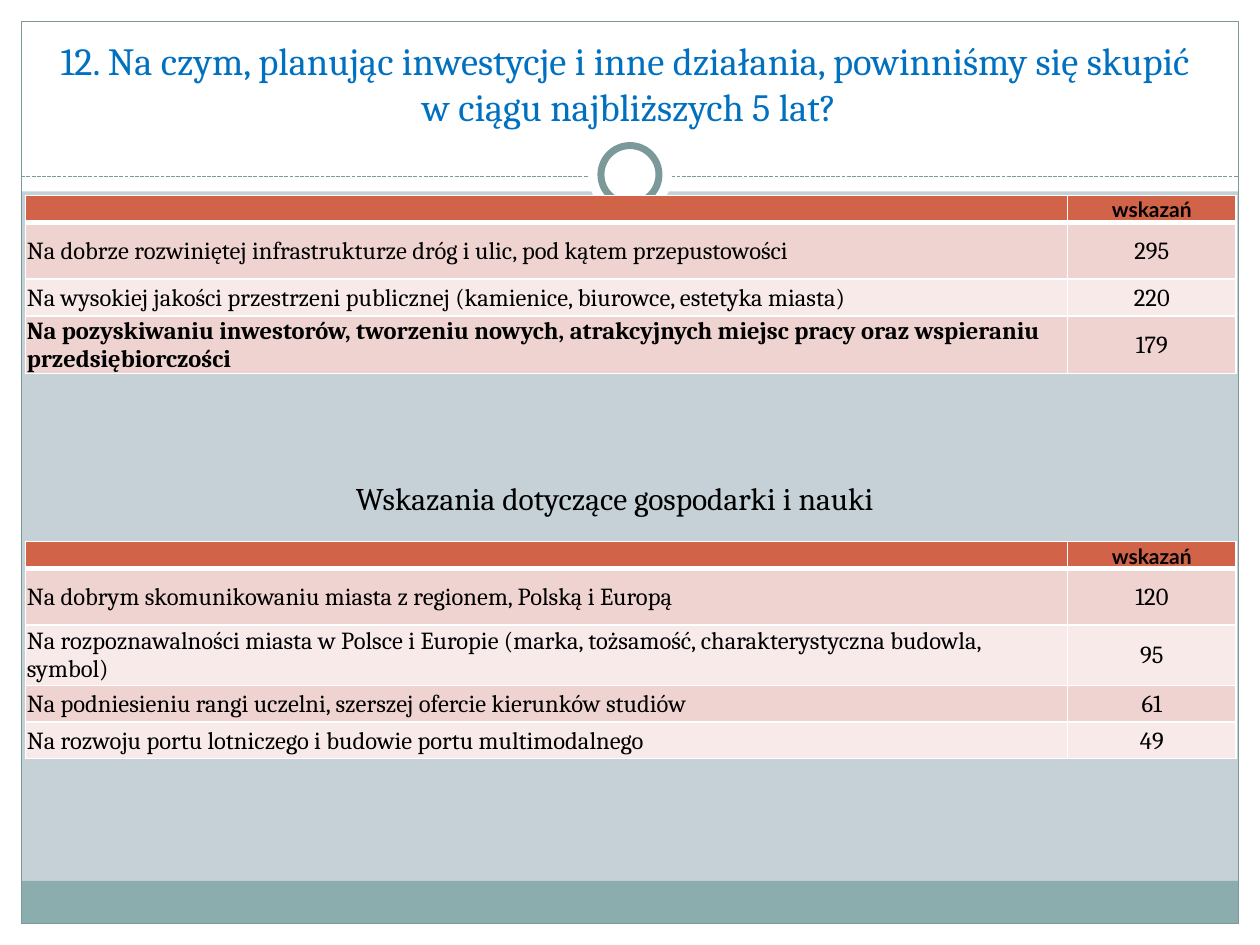
from lxml.etree import SubElement
from pptx import Presentation
from pptx.dml.color import RGBColor
from pptx.enum.dml import MSO_LINE
from pptx.enum.shapes import MSO_CONNECTOR, MSO_SHAPE
from pptx.enum.text import MSO_ANCHOR as Anchor, MSO_AUTO_SIZE as AutoSize, PP_ALIGN as Align
from pptx.oxml.ns import qn
from pptx.util import Cm, Pt

WIDTH, HEIGHT, MARGIN = 25.4, 19.05, 0.43
WHITE, BACKDROP, BAND, EDGE = "FFFFFF", "C5D1D7", "8CADAE", "7C999A"
HEADER, BAND_ROWS = "D16349", ("EED3D0", "F7EAE9")
BODY_FONT = {"name": "Cambria", "size": Pt(14), "bold": False}
HEADER_FONT = {"name": "Lato", "size": Pt(12), "bold": True}
CELL_FORMAT = {
    "margin_left": Cm(0.03), "margin_right": Cm(0.03), "margin_top": Cm(0.03),
    "margin_bottom": 0, "vertical_anchor": Anchor.MIDDLE,
}

TITLE = ("12. Na czym, planując inwestycje i inne działania, powinniśmy się skupić ",
         "w ciągu najbliższych 5 lat?")
CAPTION = "Wskazania dotyczące gospodarki i nauki"
CITY_ROWS = [
    ("Na dobrze rozwiniętej infrastrukturze dróg i ulic, pod kątem przepustowości", 295),
    ("Na wysokiej jakości przestrzeni publicznej (kamienice, biurowce, estetyka miasta)", 220),
    ("Na pozyskiwaniu inwestorów, tworzeniu nowych, atrakcyjnych miejsc pracy oraz "
     "wspieraniu przedsiębiorczości", 179),
]
ECONOMY_ROWS = [
    ("Na dobrym skomunikowaniu miasta z regionem, Polską i Europą", 120),
    ("Na rozpoznawalności miasta w Polsce i Europie (marka, tożsamość, "
     "charakterystyczna budowla, symbol)", 95),
    ("Na podniesieniu rangi uczelni, szerszej ofercie kierunków studiów", 61),
    ("Na rozwoju portu lotniczego i budowie portu multimodalnego", 49),
]


def color(value):
    return RGBColor.from_string(value)


def apply(target, values):
    for name, value in values.items():
        setattr(target, name, value)


def add_span(para, text, font, ink="000000"):
    span = para.add_run()
    span.text = text
    apply(span.font, font)
    span.font.color.rgb = color(ink)


def add_figure(page, kind, box, fill=None, line=None, weight=0.75):
    figure = page.shapes.add_shape(kind, *map(Cm, box))
    figure.shadow.inherit = False
    if fill:
        figure.fill.solid()
        figure.fill.fore_color.rgb = color(fill)
    else:
        figure.fill.background()
    if line:
        figure.line.color.rgb = color(line)
        figure.line.width = Pt(weight)
    else:
        figure.line.fill.background()


def add_frame(page, box):
    """White margins, bottom band and outline around the given inner box."""
    left, top, width, height = box
    bottom, right = top + height, left + width
    for panel in (
        (0, bottom, WIDTH, HEIGHT - bottom),
        (0, 0, WIDTH, 3.86),
        (0, 0, left, HEIGHT),
        (right, 0, WIDTH - right, HEIGHT),
    ):
        add_figure(page, MSO_SHAPE.RECTANGLE, panel, WHITE)
    add_figure(page, MSO_SHAPE.RECTANGLE, (left, bottom - 0.86, width, 0.86), BAND)
    add_figure(page, MSO_SHAPE.RECTANGLE, box, line=EDGE)


def add_ring_divider(page, left, width, middle):
    rule = page.shapes.add_connector(
        MSO_CONNECTOR.STRAIGHT, Cm(left), Cm(middle), Cm(left + width), Cm(middle))
    rule.line.color.rgb = color(EDGE)
    rule.line.width = Pt(0.75)
    rule.line.dash_style = MSO_LINE.SQUARE_DOT
    SubElement(rule.line._get_or_add_ln().getparent(), qn("a:effectLst"))
    for size, line in ((1.7, None), (1.17, EDGE)):
        box = (left + (width - size) / 2, middle - 0.04 - size / 2, size, size)
        add_figure(page, MSO_SHAPE.OVAL, box, WHITE, line, 4)


def place_title(page, box):
    title = page.shapes.title
    page.shapes._spTree.append(title._element)  # bring above the white panels
    apply(title, dict(zip(("left", "top", "width", "height"), map(Cm, box))))
    frame = title.text_frame
    apply(frame, {"word_wrap": True, "auto_size": AutoSize.NONE,
                  "vertical_anchor": Anchor.BOTTOM})
    para = frame.paragraphs[0]
    para.alignment = Align.CENTER
    for number, text in enumerate(TITLE):
        if number:
            para.add_line_break()
        add_span(para, text, BODY_FONT | {"size": Pt(22)}, "0070C0")


def add_caption(page, box):
    frame = page.shapes.add_textbox(*map(Cm, box)).text_frame
    apply(frame, {"word_wrap": True, "auto_size": AutoSize.SHAPE_TO_FIT_TEXT})
    para = frame.paragraphs[0]
    para.alignment = Align.CENTER
    add_span(para, CAPTION, BODY_FONT | {"size": Pt(18)})


def add_borders(cell, bottom):
    for side, weight in (("L", 1), ("R", 1), ("T", 1), ("B", bottom)):
        line = SubElement(cell._tc.get_or_add_tcPr(), qn(f"a:ln{side}"), w=str(Pt(weight)))
        SubElement(SubElement(line, qn("a:solidFill")), qn("a:srgbClr"), val=WHITE)


def fill_cell(cell, text, font, fill, align, bottom=1):
    apply(cell, CELL_FORMAT)
    add_borders(cell, bottom)
    cell.fill.solid()
    cell.fill.fore_color.rgb = color(fill)
    para = cell.text_frame.paragraphs[0]
    para.alignment = align
    if text:
        add_span(para, text, font)
    else:
        SubElement(para._p, qn("a:endParaRPr"), sz=str(int(font["size"].pt * 100)))


def add_answers(page, left, top, answers, bold_row=None):
    columns = (21.01, 3.4)
    heights = [0.36, 1.14] + [0.74] * (len(answers) - 1)
    table = page.shapes.add_table(
        len(heights), len(columns), Cm(left), Cm(top),
        Cm(sum(columns)), Cm(sum(heights))).table
    for column, width in zip(table.columns, columns):
        column.width = Cm(width)
    for row, height in zip(table.rows, heights):
        row.height = Cm(height)
    aligns = (Align.LEFT, Align.CENTER)
    for cell, text, align in zip(table.rows[0].cells, ("", "wskazań"), aligns):
        fill_cell(cell, text, HEADER_FONT, HEADER, align, bottom=3)
    for number, (answer, votes) in enumerate(answers):
        label, count = table.rows[number + 1].cells
        fill = BAND_ROWS[number % 2]
        fill_cell(label, answer, BODY_FONT | {"bold": number == bold_row}, fill, aligns[0])
        fill_cell(count, str(votes), BODY_FONT, fill, aligns[1])


def main():
    deck = Presentation()
    deck.slide_width, deck.slide_height = Cm(WIDTH), Cm(HEIGHT)
    page = deck.slides.add_slide(deck.slide_layouts[5])
    page.background.fill.solid()
    page.background.fill.fore_color.rgb = color(BACKDROP)
    inner_width = WIDTH - 2 * MARGIN
    add_frame(page, (MARGIN, MARGIN, inner_width, HEIGHT - 2 * MARGIN))
    add_ring_divider(page, MARGIN, inner_width, 3.56)
    place_title(page, (-0.51, 0.53, 26.39, 2.21))
    add_answers(page, 0.51, 3.94, CITY_ROWS, bold_row=2)
    add_caption(page, (0.89, 9.53, 23.01, 1.02))
    add_answers(page, 0.51, 10.92, ECONOMY_ROWS)
    deck.save("out.pptx")


if __name__ == "__main__":
    main()
